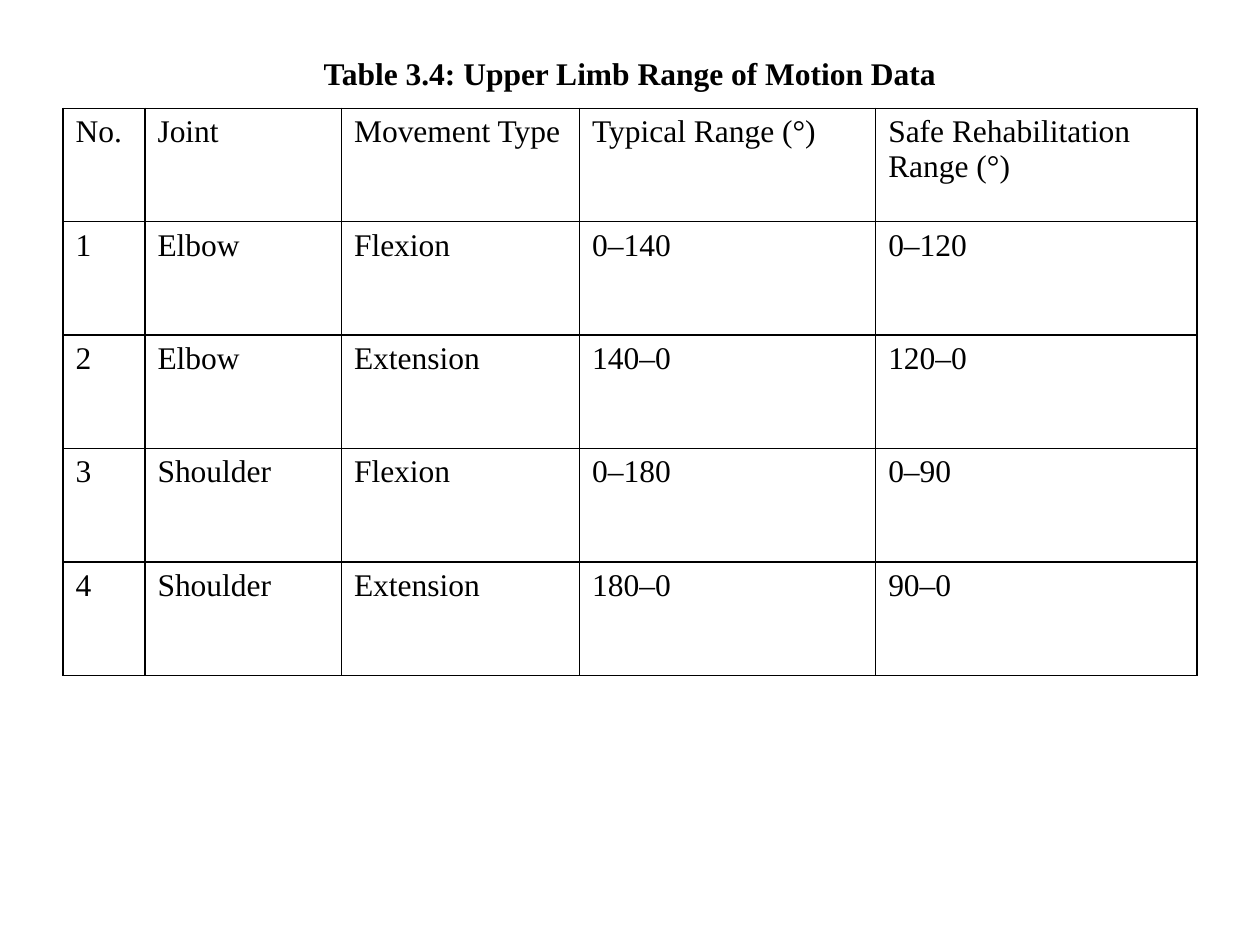
from dataclasses import dataclass

from lxml import etree
from pptx import Presentation
from pptx.dml.color import RGBColor
from pptx.enum import text
from pptx.oxml import ns
from pptx.util import Inches, Pt


@dataclass(frozen=True)
class Theme:
    font: str = "Times New Roman"
    size: int = 18
    ink: str = "000000"
    border: int = 1


THEME = Theme()
TITLE = "Table 3.4: Upper Limb Range of Motion Data"
COLUMN_WIDTHS = [0.65, 1.56, 1.89, 2.35, 2.55]
MOTION_ROWS = [
    ["No.", "Joint", "Movement Type", "Typical Range (°)", "Safe Rehabilitation Range (°)"],
    ["1", "Elbow", "Flexion", "0–140", "0–120"],
    ["2", "Elbow", "Extension", "140–0", "120–0"],
    ["3", "Shoulder", "Flexion", "0–180", "0–90"],
    ["4", "Shoulder", "Extension", "180–0", "90–0"],
]


def add_run(paragraph, wording, bold=False):
    run = paragraph.add_run()
    run.text = wording
    run.font.name = THEME.font
    run.font.size = Pt(THEME.size)
    run.font.bold = bold
    run.font.color.rgb = RGBColor.from_string(THEME.ink)


def add_borders(cell):
    properties = cell._tc.get_or_add_tcPr()
    for side in ("L", "R", "T", "B"):
        line = etree.SubElement(properties, ns.qn(f"a:ln{side}"), w=str(Pt(THEME.border)))
        fill = etree.SubElement(line, ns.qn("a:solidFill"))
        etree.SubElement(fill, ns.qn("a:srgbClr"), val=THEME.ink)


def add_title(slide, left, top, width, height):
    frame = slide.shapes.add_textbox(left, top, width, height).text_frame
    frame.word_wrap = True
    frame.vertical_anchor = text.MSO_ANCHOR.MIDDLE
    heading = frame.paragraphs[0]
    heading.alignment = text.PP_ALIGN.CENTER
    add_run(heading, TITLE, bold=True)


def add_motion_table(slide, left, top, width, height):
    table = slide.shapes.add_table(
        len(MOTION_ROWS), len(COLUMN_WIDTHS), left, top, width, height
    ).table
    table.first_row = False
    table.horz_banding = False
    for column, share in zip(table.columns, COLUMN_WIDTHS):
        column.width = int(width * share / sum(COLUMN_WIDTHS))
    for row, entries in zip(table.rows, MOTION_ROWS):
        for cell, entry in zip(row.cells, entries):
            add_borders(cell)
            cell.fill.background()
            add_run(cell.text_frame.paragraphs[0], entry)


def main():
    deck = Presentation()
    deck.slide_width, deck.slide_height = Inches(10), Inches(7.5)
    slide = deck.slides.add_slide(deck.slide_layouts[6])
    add_title(slide, Inches(0.5), Inches(0.3), Inches(9), Inches(0.56))
    add_motion_table(slide, Inches(0.5), Inches(0.86), Inches(9), Inches(4.5))
    deck.save("out.pptx")


if __name__ == "__main__":
    main()
